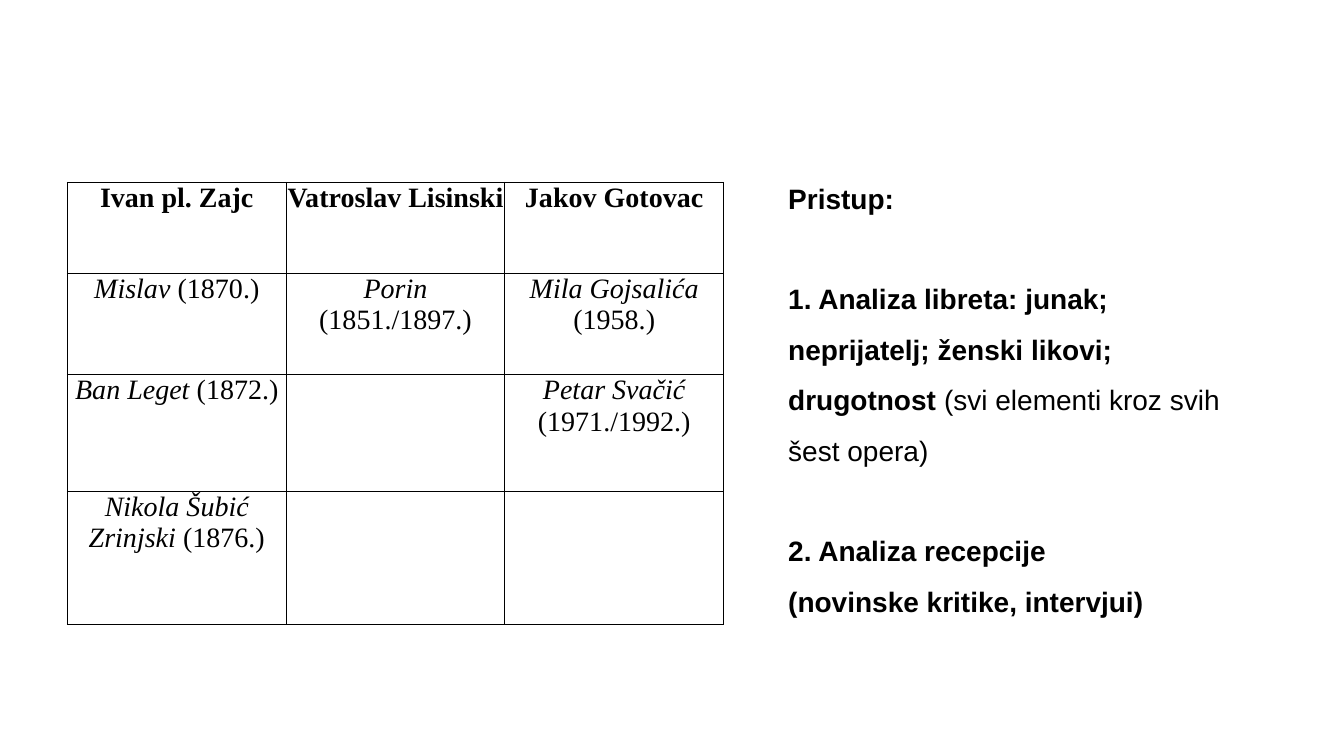
from lxml.etree import SubElement
from pptx import Presentation
from pptx.dml.color import RGBColor
from pptx.enum.text import MSO_ANCHOR, MSO_AUTO_SIZE, PP_ALIGN
from pptx.oxml.ns import qn
from pptx.util import Pt

COLORS = {"ink": "000000", "paper": "FFFFFF"}
OPERAS = [
    ["Ivan pl. Zajc", "Vatroslav Lisinski", "Jakov Gotovac"],
    [("Mislav ", "(1870.)"), ("Porin ", "(1851./1897.)"), ("Mila Gojsalića ", "(1958.)")],
    [("Ban Leget ", "(1872.)"), None, ("Petar Svačić ", "(1971./1992.)")],
    [("Nikola Šubić Zrinjski ", "(1876.)"), None, None],
]
HEIGHTS = [64.8, 72.7, 83.5, 95]
GAP = 36  # one line of the approach list
STEPS = [
    (0, [("Pristup:", True)]),
    (GAP, [("1. Analiza libreta: junak; neprijatelj; ženski likovi; drugotnost ", True),
           ("(svi elementi kroz svih šest opera)", False)]),
    (GAP, [("2. Analiza recepcije", True)]),
    (0, [("(novinske kritike, intervjui)", True)]),
]


def write(par, text, font="Arial", size=20, color="ink", bold=False, italic=False):
    run = par.add_run()
    run.text = text
    face = run.font
    face.name, face.size = font, Pt(size)
    face.bold, face.italic = bold, italic
    face.color.rgb = RGBColor.from_string(COLORS[color])


class Page:
    serif = "Times New Roman"
    sans = "Arial"
    rule = 1

    def __init__(self, deck):
        self.slide = deck.slides.add_slide(deck.slide_layouts[1])
        fill = self.slide.background.fill
        fill.solid()
        fill.fore_color.rgb = RGBColor.from_string(COLORS["paper"])
        title = self.slide.shapes.title.element
        title.getparent().remove(title)

    def frame(self, cell):
        """Draw a line on all four sides of a cell and leave it unfilled."""
        props = cell._tc.get_or_add_tcPr()
        for side in ("lnL", "lnR", "lnT", "lnB"):
            line = SubElement(props, qn(f"a:{side}"), w=str(Pt(self.rule)))
            fill = SubElement(line, qn("a:solidFill"))
            SubElement(fill, qn("a:srgbClr"), val=COLORS["ink"])
        cell.fill.background()

    def cell(self, cell, entry):
        """Fill a cell with a bold name, or an italic title and its year."""
        cell.margin_left = cell.margin_right = 0
        cell.margin_top = cell.margin_bottom = 0
        cell.vertical_anchor = MSO_ANCHOR.TOP
        self.frame(cell)
        par = cell.text_frame.paragraphs[0]
        par.alignment = PP_ALIGN.CENTER
        if isinstance(entry, str):
            write(par, entry, font=self.serif, bold=True)
        elif entry:
            name, year = entry
            write(par, name, font=self.serif, italic=True)
            write(par, year, font=self.serif)

    def table(self, rows, heights, left, top, width):
        count = len(rows[0])
        grid = self.slide.shapes.add_table(
            len(rows), count, Pt(left), Pt(top), Pt(width), Pt(sum(heights))).table
        grid.first_row = grid.horz_banding = False
        for col in grid.columns:
            col.width = Pt(width / count)
        for r, (row, height) in enumerate(zip(rows, heights)):
            grid.rows[r].height = Pt(height)
            for c, entry in enumerate(row):
                self.cell(grid.cell(r, c), entry)

    def body(self, items, left, top, width, height):
        box = self.slide.placeholders[1]
        box.left, box.top = Pt(left), Pt(top)
        box.width, box.height = Pt(width), Pt(height)
        frame = box.text_frame
        frame.word_wrap = True
        frame.auto_size = MSO_AUTO_SIZE.SHAPE_TO_FIT_TEXT
        for i, (space, runs) in enumerate(items):
            par = frame.add_paragraph() if i else frame.paragraphs[0]
            props = par._p.get_or_add_pPr()
            props.set("marL", "0")
            props.set("indent", "0")
            SubElement(props, qn("a:buNone"))
            par.line_spacing = 1.5
            par.space_before = Pt(space)
            for text, bold in runs:
                write(par, text, font=self.sans, bold=bold)


def main():
    deck = Presentation()
    deck.slide_width, deck.slide_height = Pt(960), Pt(540)
    page = Page(deck)
    page.table(OPERAS, HEIGHTS, left=48.2, top=130.3, width=468.7)
    page.body(STEPS, left=555.8, top=113.8, width=344.9, height=334)
    deck.save("out.pptx")


if __name__ == "__main__":
    main()
